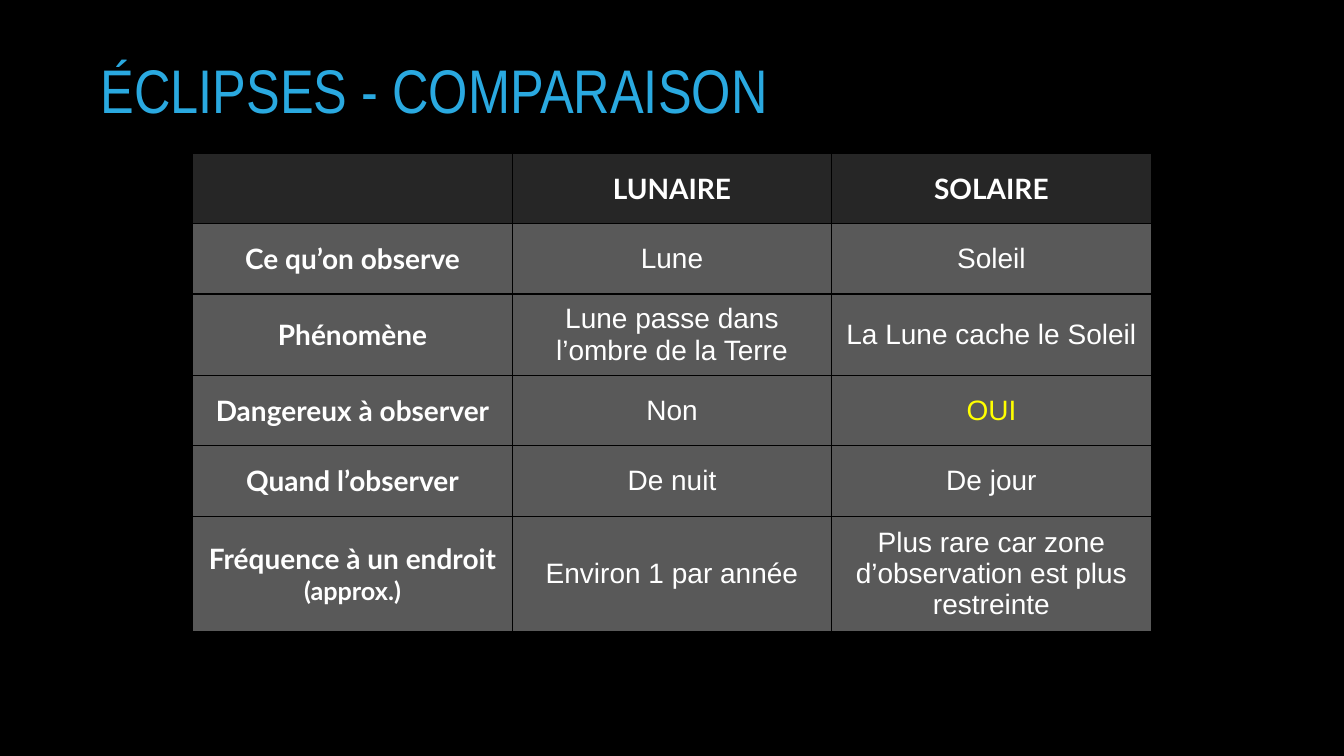
from lxml.etree import SubElement
from pptx import Presentation
from pptx.dml.color import RGBColor
from pptx.enum.text import MSO_ANCHOR, PP_ALIGN
from pptx.oxml.ns import qn
from pptx.util import Cm, Pt

BLACK = RGBColor(0x00, 0x00, 0x00)
WHITE = RGBColor(0xFF, 0xFF, 0xFF)
YELLOW = RGBColor(0xFF, 0xFF, 0x00)
TITLE_BLUE = RGBColor(0x2A, 0xA9, 0xE0)
HEADER_GREY = RGBColor(0x26, 0x26, 0x26)
BODY_GREY = RGBColor(0x59, 0x59, 0x59)

COMPARISON = [
    ("", "LUNAIRE", "SOLAIRE"),
    ("Ce qu’on observe", "Lune", "Soleil"),
    ("Phénomène", "Lune passe dans l’ombre de la Terre", "La Lune cache le Soleil"),
    ("Dangereux à observer", "Non", "OUI"),
    ("Quand l’observer", "De nuit", "De jour"),
    ("Fréquence à un endroit ", "Environ 1 par année",
     "Plus rare car zone d’observation est plus restreinte"),
]
COLUMN_WIDTH = Cm(8.05)
ROW_HEIGHT = Cm(1.77)


def add_text(paragraph, text, size=20, font="Arial", color=WHITE, bold=False):
    run = paragraph.add_run()
    run.text = text
    run.font.size = Pt(size)
    run.font.name = font
    run.font.color.rgb = color
    run.font.bold = bold


def add_borders(cell):
    properties = cell._tc.get_or_add_tcPr()
    for side in ("a:lnL", "a:lnR", "a:lnT", "a:lnB"):
        line = SubElement(properties, qn(side), w=str(Pt(1)))
        fill = SubElement(line, qn("a:solidFill"))
        SubElement(fill, qn("a:srgbClr"), val=str(BLACK))


prs = Presentation()
prs.slide_width = Cm(33.87)
prs.slide_height = Cm(19.05)
slide = prs.slides.add_slide(prs.slide_layouts[6])
slide.background.fill.solid()
slide.background.fill.fore_color.rgb = BLACK

title = slide.shapes.add_textbox(Cm(2.29), Cm(0.53), Cm(29.21), Cm(3.68)).text_frame
title.word_wrap = True
title.vertical_anchor = MSO_ANCHOR.MIDDLE
title.paragraphs[0].line_spacing = 0.9
add_text(title.paragraphs[0], "ÉCLIPSES - COMPARAISON",
         size=44, font="Arial Narrow", color=TITLE_BLUE)

row_count, column_count = len(COMPARISON), len(COMPARISON[0])
table = slide.shapes.add_table(
    row_count, column_count, Cm(4.86), Cm(3.87),
    COLUMN_WIDTH * column_count, ROW_HEIGHT * row_count).table
for column in table.columns:
    column.width = COLUMN_WIDTH
for row in table.rows:
    row.height = ROW_HEIGHT

for row_index, entries in enumerate(COMPARISON):
    for column_index, entry in enumerate(entries):
        cell = table.cell(row_index, column_index)
        add_borders(cell)
        cell.fill.solid()
        cell.fill.fore_color.rgb = HEADER_GREY if row_index == 0 else BODY_GREY
        cell.vertical_anchor = MSO_ANCHOR.MIDDLE
        cell.margin_left = cell.margin_right = Cm(0.36)
        cell.margin_top = cell.margin_bottom = Cm(0.18)
        cell.text_frame.paragraphs[0].alignment = PP_ALIGN.CENTER
        if entry:
            heading = row_index == 0 or column_index == 0
            add_text(cell.text_frame.paragraphs[0], entry,
                     font="Lato" if heading else "Arial", bold=heading,
                     color=YELLOW if entry == "OUI" else WHITE)

frequency_label = table.cell(row_count - 1, 0).text_frame.paragraphs[0]
add_text(frequency_label, "(approx.)", size=18, font="Lato", bold=True)

prs.save("out.pptx")
